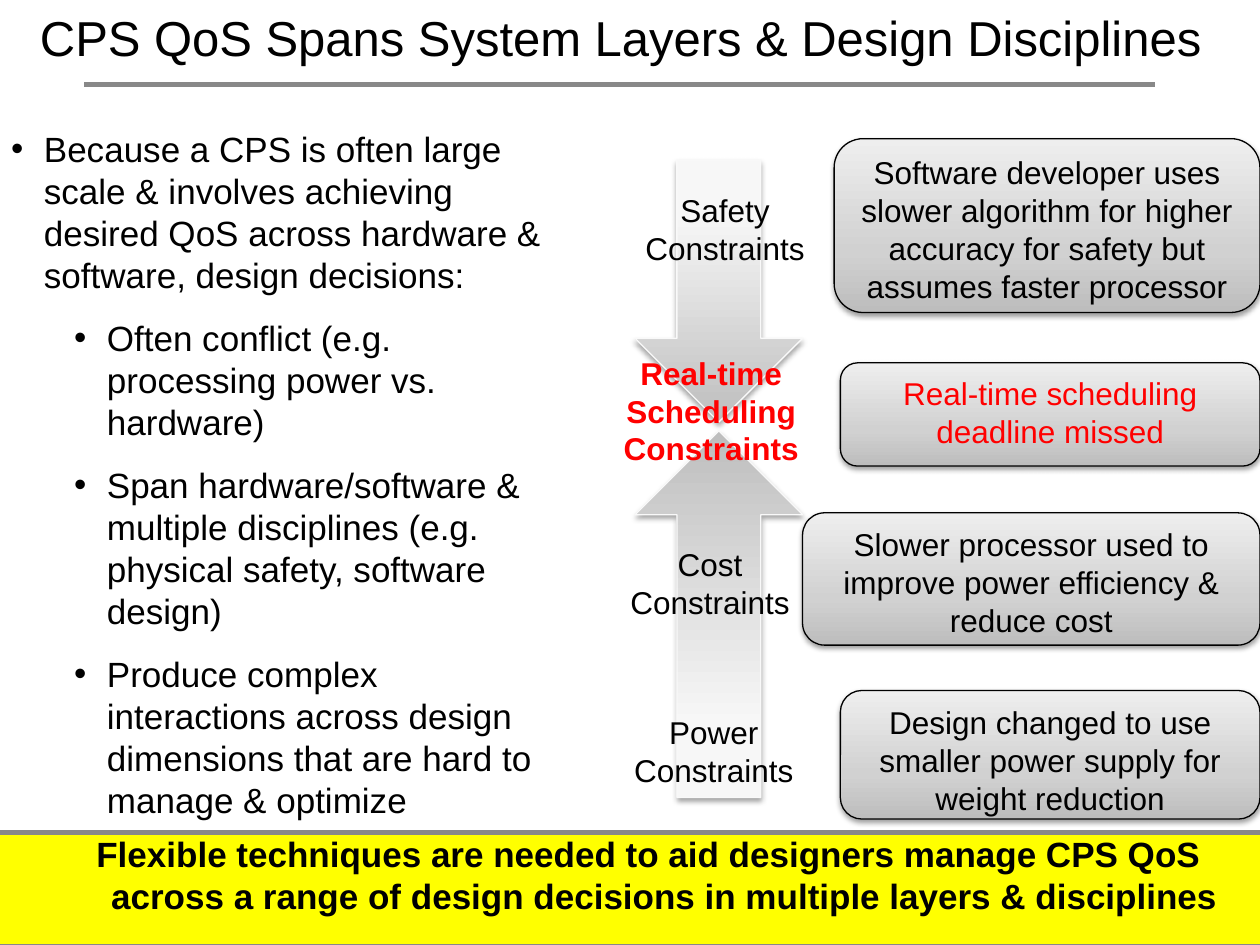
"""Build the slide on CPS QoS across system layers and design disciplines."""
from lxml import etree
from pptx import Presentation, util as u
from pptx.dml.color import RGBColor
from pptx.enum import shapes, text
from pptx.oxml.ns import qn

rgb = RGBColor.from_string
prs = Presentation()
prs.slide_width, prs.slide_height = u.Inches(10), u.Inches(7.5)


def share(*percents):
    """Turn percentages, across and down in turn, into slide lengths."""
    sizes = (prs.slide_width, prs.slide_height) * 2
    return [int(size * p / 100) for size, p in zip(sizes, percents)]


def write(sp, lines, size, color="000000", bold=False, align=text.PP_ALIGN.CENTER):
    """Fill a shape with top-anchored paragraphs in one style."""
    tf = sp.text_frame
    tf.word_wrap = True
    tf.vertical_anchor = text.MSO_ANCHOR.TOP
    tf.text = "\n".join(lines)
    for p in tf.paragraphs:
        p.alignment = align
        for r in p.runs:
            r.font.name, r.font.size, r.font.bold = "Arial", u.Pt(size), bold
            r.font.color.rgb = rgb(color)
    return tf


s = prs.slides.add_slide(prs.slide_layouts[5])
title = s.shapes.title
title.left, title.top, title.width, title.height = share(1.6, 0.13, 95.3, 7.6)
tf = write(title, ["CPS QoS Spans System Layers & Design Disciplines"], 28)
tf.auto_size = text.MSO_AUTO_SIZE.NONE
tf.word_wrap = False

rule = s.shapes.add_connector(shapes.MSO_CONNECTOR.STRAIGHT, *share(6.7, 8.93, 91.7, 8.93))
rule.line.color.rgb, rule.line.width = rgb("888888"), u.Pt(3)
etree.SubElement(rule._element.spPr, qn("a:effectLst"))

arrow_style = ([(0, "BEBEBE"), (80, "F7F7F7"), (100, "F8F8F8")], "F9F9F9", 35, 1.8)
panel_style = ([(0, "BDBDBD"), (35, "D1D1D1"), (100, "EEEEEE")], "000000", 38, 1.6)
arrow, panel = shapes.MSO_SHAPE.DOWN_ARROW, shapes.MSO_SHAPE.ROUNDED_RECTANGLE
graded = [
    (arrow, (50.4, 45.6, 13.3, 38.8), 180, arrow_style, "", "000000"),
    (arrow, (50.4, 16.93, 13.3, 27.73), 0, arrow_style, "", "000000"),
    (panel, (66.7, 73.07, 33.3, 13.6), 0, panel_style,
     "Design changed to use smaller power supply for weight reduction", "000000"),
    (panel, (63.7, 54.27, 36.3, 14), 0, panel_style,
     "Slower processor used to improve power efficiency & reduce cost", "000000"),
    (panel, (66.2, 14.67, 33.8, 18.4), 0, panel_style,
     "Software developer uses slower algorithm for higher accuracy for safety "
     "but assumes faster processor", "000000"),
    (panel, (66.7, 38.4, 33.3, 10.93), 0, panel_style,
     "Real-time scheduling deadline missed", "FF0000"),
]
for kind, place, turn, (stops, edge, alpha, drop), words, color in graded:
    sp = s.shapes.add_shape(kind, *share(*place))
    sp.rotation = turn
    sp.line.color.rgb, sp.line.width = rgb(edge), u.Pt(0.75)
    sp.fill.gradient()
    sp.fill.gradient_angle = 90
    sp.shadow.inherit = False
    spPr = sp._element.spPr
    gs_list = spPr.find(".//" + qn("a:gsLst"))
    for old in list(gs_list):
        gs_list.remove(old)
    for pos, shade in stops:
        gs = etree.SubElement(gs_list, qn("a:gs"), pos=str(pos * 1000))
        etree.SubElement(gs, qn("a:srgbClr"), val=shade)
    shadow = etree.SubElement(spPr.find(qn("a:effectLst")), qn("a:outerShdw"),
                              blurRad=str(u.Pt(3.1)), dist=str(u.Pt(drop)),
                              dir="5400000", rotWithShape="0")
    black = etree.SubElement(shadow, qn("a:srgbClr"), val="000000")
    etree.SubElement(black, qn("a:alpha"), val=str(alpha * 1000))
    if words:
        write(sp, [words], 18, color)

body = s.shapes.add_textbox(*share(-0.1, 12.8, 45.8, 81.2))
tf = write(body, [
    "Because a CPS is often large scale & involves achieving desired QoS across "
    "hardware & software, design decisions:",
    "Often conflict (e.g. processing power vs. hardware)",
    "Span hardware/software & multiple disciplines (e.g. physical safety, software design)",
    "Produce complex interactions across design dimensions that are hard to manage & optimize",
], 20, align=text.PP_ALIGN.LEFT)
for i, p in enumerate(tf.paragraphs):
    p.level = min(i, 1)
    p.space_before = u.Pt(12)
    pPr = p._p.get_or_add_pPr()
    pPr.set("marL", str(u.Inches(0.26 + 0.5 * p.level)))
    pPr.set("indent", str(u.Inches(-0.26)))
    etree.SubElement(pPr, qn("a:buFont"), typeface="Arial")
    etree.SubElement(pPr, qn("a:buChar"), char="•")

band = s.shapes.add_shape(shapes.MSO_SHAPE.RECTANGLE, *share(-2.3, 88.13, 108.4, 12))
band.shadow.inherit = False
band.fill.solid()
band.fill.fore_color.rgb = rgb("FFFF00")
band.line.color.rgb, band.line.width = rgb("888888"), u.Pt(3)

summary = s.shapes.add_textbox(*share(1.8, 87.47, 98.2, 10.27))
tf = write(summary, ["Flexible techniques are needed to aid designers manage CPS QoS across "
                     "a range of design decisions in multiple layers & disciplines"], 20, bold=True)
p = tf.paragraphs[0]
p.level = 1
pPr = p._p.get_or_add_pPr()
pPr.set("marL", str(u.Inches(0.37)))
pPr.set("indent", str(u.Inches(-0.25)))

for x, y, h, name, color, bold in [
    (45.6, 36.8, 13.47, "Real-time Scheduling", "FF0000", True),
    (46.7, 19.6, 9.47, "Safety", "000000", False),
    (45.8, 74.8, 9.47, "Power", "000000", False),
    (45.5, 57.07, 9.47, "Cost", "000000", False),
]:
    label = s.shapes.add_textbox(*share(x, y, 21.7, h))
    write(label, [name, "Constraints"], 18, color, bold)

prs.save("out.pptx")
